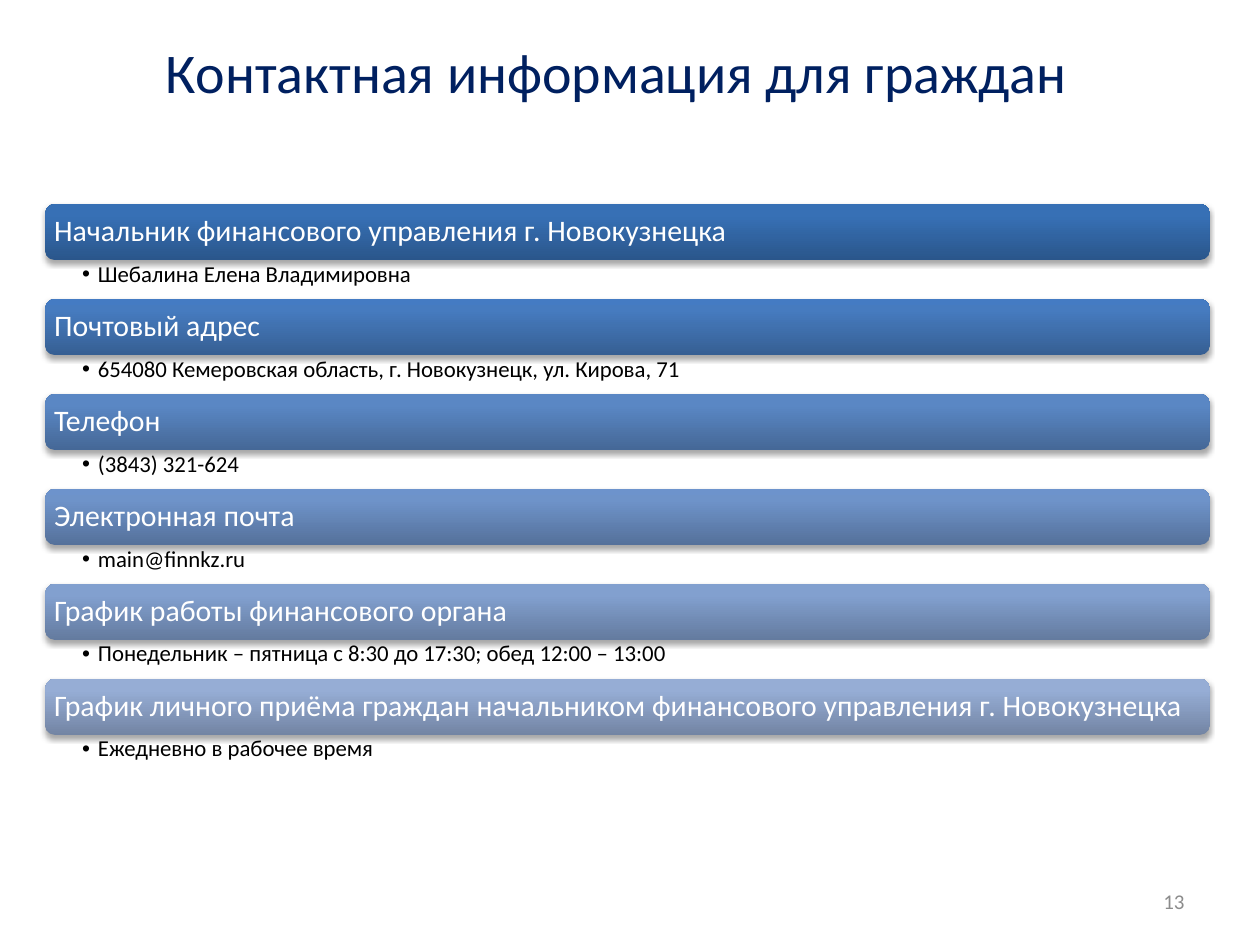
"""Build the contact information slide for citizens."""
from lxml.etree import SubElement
from pptx import Presentation
from pptx.dml.color import RGBColor
from pptx.enum.shapes import MSO_SHAPE
from pptx.enum.text import MSO_ANCHOR, PP_ALIGN
from pptx.oxml.ns import qn
from pptx.util import Pt

TITLE = "Контактная информация для граждан"
NUMBER = "13"
ITEMS = [
    ("Начальник финансового управления г. Новокузнецка", "Шебалина Елена Владимировна",
     ("2A568B", "3770B5", "3570B8")),
    ("Почтовый адрес", "654080 Кемеровская область, г. Новокузнецк, ул. Кирова, 71",
     ("365F93", "467BBF", "447BC3")),
    ("Телефон", "(3843) 321-624", ("456897", "5A87C4", "5887C7")),
    ("Электронная почта", "main@finnkz.ru", ("55719B", "6E93C9", "6D93CC")),
    ("График работы финансового органа",
     "Понедельник – пятница с 8:30 до 17:30; обед 12:00 – 13:00",
     ("647B9F", "82A0CF", "81A0D1")),
    ("График личного приёма граждан начальником финансового управления г. Новокузнецка",
     "Ежедневно в рабочее время", ("7385A4", "96ADD5", "95ADD7")),
]
COLORS = {"title": "002060", "bar": "FFFFFF", "body": "000000", "number": "8C8C8C"}
LEFT, TOP, WIDTH = 25.9, 116.6, 665.3
BAR, NOTE, PITCH = 32, 22.2, 54.26
STOPS = (0, 80000, 100000)


def add(parent, tag, **attrs):
    node = SubElement(parent, qn(tag))
    for key, value in attrs.items():
        node.set(key, str(value))
    return node


def write(shape, text, size, color, insets, anchor=MSO_ANCHOR.MIDDLE, align=PP_ALIGN.LEFT):
    frame = shape.text_frame
    frame.text = text
    frame.word_wrap = True
    frame.vertical_anchor = anchor
    (frame.margin_left, frame.margin_top,
     frame.margin_right, frame.margin_bottom) = map(Pt, insets)
    line = frame.paragraphs[0]
    line.alignment = align
    font = line.runs[0].font
    font.name, font.size = "Calibri", Pt(size)
    font.color.rgb = RGBColor.from_string(COLORS[color])
    return line


def shade(shape, colors):
    shape.fill.gradient()
    shape.fill.gradient_angle = 90
    shape.line.fill.background()
    shape.shadow.inherit = False
    props = shape.fill._xPr
    stops = props.find(qn("a:gradFill")).find(qn("a:gsLst"))
    for old in list(stops):
        stops.remove(old)
    for place, color in zip(STOPS, colors):
        add(add(stops, "a:gs", pos=place), "a:srgbClr", val=color)
    cast = add(props.find(qn("a:effectLst")), "a:outerShdw", blurRad=Pt(3.1),
               dist=Pt(1.8), dir=5400000, rotWithShape=0)
    add(add(cast, "a:srgbClr", val="000000"), "a:alpha", val=35000)


def bullet(line):
    props = line._p.get_or_add_pPr()
    props.set("marL", str(Pt(9)))
    props.set("indent", str(-Pt(9)))
    add(props, "a:buFont", typeface="Arial")
    add(props, "a:buChar", char="•")


def main():
    deck = Presentation()
    deck.slide_width, deck.slide_height = Pt(720), Pt(540)
    shapes = deck.slides.add_slide(deck.slide_layouts[6]).shapes

    for row, (head, note, colors) in enumerate(ITEMS):
        top = TOP + row * PITCH
        bar = shapes.add_shape(MSO_SHAPE.ROUNDED_RECTANGLE,
                               Pt(LEFT), Pt(top), Pt(WIDTH), Pt(BAR))
        shade(bar, colors)
        write(bar, head, 17, "bar", (3.5, 3.5, 3.5, 3.5)).line_spacing = 0.9
        box = shapes.add_textbox(Pt(LEFT), Pt(top + BAR), Pt(WIDTH), Pt(NOTE))
        line = write(box, note, 13, "body", (21.1, 1.4, 9.4, 1.4), MSO_ANCHOR.TOP)
        line.line_spacing = 0.9
        bullet(line)

    box = shapes.add_textbox(Pt(516), Pt(500.5), Pt(168), Pt(28.8))
    write(box, NUMBER, 12, "number", (7.2, 3.6, 7.2, 3.6), align=PP_ALIGN.RIGHT)
    box = shapes.add_textbox(Pt(87.8), Pt(12.2), Pt(616.3), Pt(51.1))
    write(box, TITLE, 32, "title", (7.2, 3.6, 7.2, 3.6), MSO_ANCHOR.BOTTOM)
    deck.save("out.pptx")


if __name__ == "__main__":
    main()
